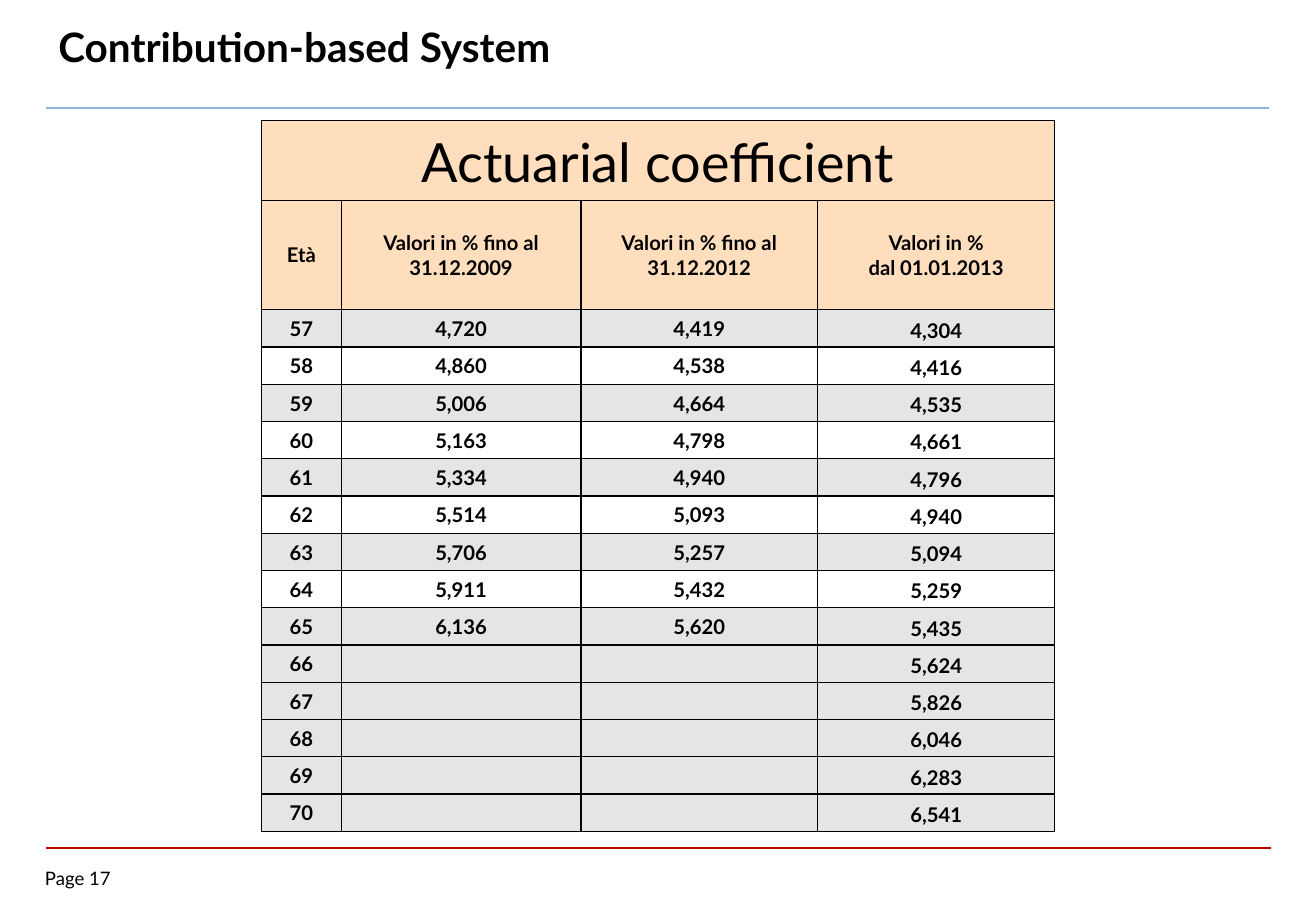
from lxml.etree import SubElement
from pptx import Presentation
from pptx.dml.color import RGBColor
from pptx.enum.shapes import MSO_CONNECTOR
from pptx.enum.text import MSO_ANCHOR as ANCHOR, PP_ALIGN as ALIGN
from pptx.oxml.ns import qn
from pptx.util import Inches, Pt

FONT = "Lato"
BLACK = RGBColor(0x00, 0x00, 0x00)
WHITE = RGBColor(0xFF, 0xFF, 0xFF)
PEACH = RGBColor(0xFF, 0xDE, 0xBD)
GREY = RGBColor(0xE5, 0xE5, 0xE5)
BLUE = RGBColor(0x8E, 0xB4, 0xE3)
RED = RGBColor(0xC0, 0x00, 0x00)

COLUMN_WIDTHS = [0.66, 1.97, 1.95, 1.95]
TITLE_HEIGHT, HEADER_HEIGHT, ROW_HEIGHT = 0.66, 0.9, 0.307
HEADERS = ["Età", "Valori in % fino al 31.12.2009",
           "Valori in % fino al 31.12.2012", "Valori in %\vdal 01.01.2013"]
FIRST_AGE = 57
UNTIL_2009 = ["4,720", "4,860", "5,006", "5,163", "5,334", "5,514", "5,706", "5,911", "6,136"]
UNTIL_2012 = ["4,419", "4,538", "4,664", "4,798", "4,940", "5,093", "5,257", "5,432", "5,620"]
FROM_2013 = ["4,304", "4,416", "4,535", "4,661", "4,796", "4,940", "5,094",
             "5,259", "5,435", "5,624", "5,826", "6,046", "6,283", "6,541"]
LAST_SHORT_AGE = FIRST_AGE + len(UNTIL_2009) - 1


def write(frame, text, size, bold=False, align=ALIGN.LEFT):
    paragraph = frame.paragraphs[0]
    paragraph.text = text
    paragraph.alignment = align
    formats = {"name": FONT, "size": Pt(size), "bold": bold}
    for run in paragraph.runs:
        for name, value in formats.items():
            setattr(run.font, name, value)
        run.font.color.rgb = BLACK
    return paragraph


def format_cell(cell, fill, margins, anchor):
    """Draw the four black borders, then set fill, margins and anchor."""
    properties = cell._tc.get_or_add_tcPr()
    for side in ("a:lnL", "a:lnR", "a:lnT", "a:lnB"):
        border = SubElement(properties, qn(side), w=str(Pt(1)))
        SubElement(SubElement(border, qn("a:solidFill")), qn("a:srgbClr"), val=str(BLACK))
    cell.fill.solid()
    cell.fill.fore_color.rgb = fill
    cell.vertical_anchor = anchor
    cell.margin_left = cell.margin_right = Inches(margins[0])
    cell.margin_top = cell.margin_bottom = Inches(margins[1])


presentation = Presentation()
presentation.slide_width, presentation.slide_height = Inches(10.83), Inches(7.5)
slide = presentation.slides.add_slide(presentation.slide_layouts[5])

# Title
title = slide.shapes.title
title.left, title.top, title.width, title.height = map(Inches, (0.38, 0.13, 9.92, 0.71))
title.text_frame.vertical_anchor = ANCHOR.TOP
write(title.text_frame, "Contribution-based System", 24, bold=True)

# Rules above and below the table
for y, right, color, width in ((0.89, 10.44, BLUE, 1.5), (6.98, 10.46, RED, 1)):
    rule = slide.shapes.add_connector(
        MSO_CONNECTOR.STRAIGHT, Inches(0.38), Inches(y), Inches(right), Inches(y))
    rule.line.color.rgb = color
    rule.line.width = Pt(width)
    SubElement(rule._element.spPr, qn("a:effectLst"))

# Page number
page_box = slide.shapes.add_textbox(*map(Inches, (0.37, 7.14, 0.73, 0.22)))
page_frame = page_box.text_frame
for side in ("left", "right", "top", "bottom"):
    setattr(page_frame, f"margin_{side}", 0)
page_frame.word_wrap = True
write(page_frame, "Page 17", 11)

# Table
row_heights = [TITLE_HEIGHT, HEADER_HEIGHT] + [ROW_HEIGHT] * len(FROM_2013)
table = slide.shapes.add_table(
    len(row_heights), len(COLUMN_WIDTHS), Inches(2.15), Inches(0.99),
    Inches(sum(COLUMN_WIDTHS)), Inches(sum(row_heights))).table
table.first_row = table.horz_banding = False
for column, width in zip(table.columns, COLUMN_WIDTHS):
    column.width = Inches(width)
for row, height in zip(table.rows, row_heights):
    row.height = Inches(height)

for cell in table.rows[0].cells:
    format_cell(cell, PEACH, (0.1, 0.05), ANCHOR.BOTTOM)
table.cell(0, 0).merge(table.cell(0, len(COLUMN_WIDTHS) - 1))
write(table.cell(0, 0).text_frame, "Actuarial coefficient", 32, align=ALIGN.CENTER)

for cell, header in zip(table.rows[1].cells, HEADERS):
    format_cell(cell, PEACH, (0.1, 0.05), ANCHOR.MIDDLE)
    write(cell.text_frame, header, 12, bold=True, align=ALIGN.CENTER)

for index, latest in enumerate(FROM_2013):
    age = FIRST_AGE + index
    earlier = [values[index] if index < len(values) else ""
               for values in (UNTIL_2009, UNTIL_2012)]
    fill = WHITE if age % 2 == 0 and age <= LAST_SHORT_AGE else GREY
    for column, text in enumerate([str(age), *earlier, latest]):
        cell = table.cell(index + 2, column)
        is_latest = column == len(COLUMN_WIDTHS) - 1
        if is_latest or not text:
            format_cell(cell, fill, (0.03, 0.03), ANCHOR.MIDDLE)
        else:
            format_cell(cell, fill, (0.1, 0.05), ANCHOR.BOTTOM)
        paragraph = write(cell.text_frame, text, 12, bold=True, align=ALIGN.CENTER)
        if is_latest:
            paragraph.line_spacing = 1.15
        if not text:
            SubElement(paragraph._p, qn("a:endParaRPr"), sz="1200")

presentation.save("out.pptx")
